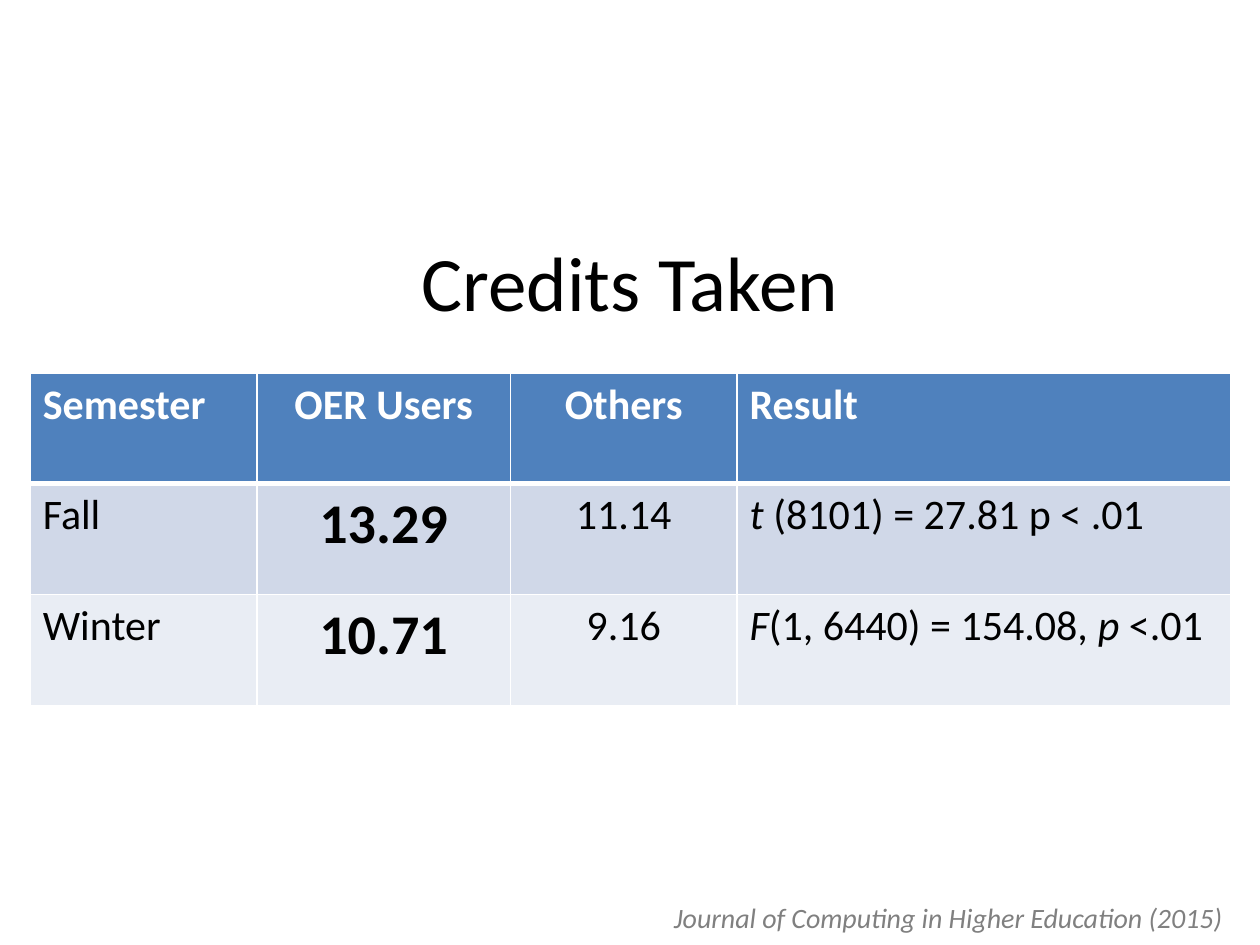
from lxml.etree import SubElement
from pptx import Presentation
from pptx.dml.color import RGBColor
from pptx.enum.text import MSO_ANCHOR, PP_ALIGN
from pptx.oxml.ns import qn
from pptx.util import Inches, Pt

FONT = "Calibri"
BLACK = RGBColor(0x00, 0x00, 0x00)
WHITE = RGBColor(0xFF, 0xFF, 0xFF)
GRAY = RGBColor(0x80, 0x80, 0x80)
HEADER_BLUE = RGBColor(0x4F, 0x81, 0xBD)
ROW_FILLS = [HEADER_BLUE, RGBColor(0xD0, 0xD8, 0xE8), RGBColor(0xE9, 0xED, 0xF4)]

TITLE = "Credits Taken"
CITATION = "Journal of Computing in Higher Education (2015)"
# Each cell is a list of text runs.
ROWS = [
    [["Semester"], ["OER Users"], ["Others"], ["Result"]],
    [["Fall"], ["13.29"], ["11.14"], ["t", " (8101) = 27.81 p < .01"]],
    [["Winter"], ["10.71"], ["9.16"], ["F", "(1, 6440) = 154.08, ", "p", " <.01"]],
]
STATISTIC_SYMBOLS = {"t", "F", "p"}
COLUMN_WIDTHS = [1.8, 2.01, 1.8, 3.92]
ROW_HEIGHT = 0.88
OER_COLUMN = 1
CENTERED_COLUMNS = {1, 2}


def format_run(run, size, color, bold=False, italic=False):
    run.font.name = FONT
    run.font.size = Pt(size)
    run.font.color.rgb = color
    run.font.bold = bold
    run.font.italic = italic


def set_borders(cell, bottom_width, top_width):
    properties = cell._tc.get_or_add_tcPr()
    widths = {"lnL": 1, "lnR": 1, "lnT": top_width, "lnB": bottom_width}
    for index, (side, width) in enumerate(widths.items()):
        line = SubElement(properties, qn(f"a:{side}"), w=str(Pt(width)))
        properties.insert(index, line)  # borders precede the fill
        fill = SubElement(line, qn("a:solidFill"))
        SubElement(fill, qn("a:srgbClr"), val=str(WHITE))


def fill_cell(cell, texts, row, column):
    is_header = row == 0
    is_highlight = not is_header and column == OER_COLUMN
    cell.fill.solid()
    cell.fill.fore_color.rgb = ROW_FILLS[row]
    set_borders(cell, 3 if is_header else 1, 3 if row == 1 else 1)
    paragraph = cell.text_frame.paragraphs[0]
    paragraph.alignment = PP_ALIGN.CENTER if column in CENTERED_COLUMNS else PP_ALIGN.LEFT
    for text in texts:
        run = paragraph.add_run()
        run.text = text
        format_run(run, 32 if is_highlight else 24, WHITE if is_header else BLACK,
                   is_header or is_highlight, text in STATISTIC_SYMBOLS)


def add_title(slide):
    title = slide.shapes.title
    title.left, title.top = Inches(0.75), Inches(1.42)
    title.width, title.height = Inches(8.5), Inches(1.61)
    frame = title.text_frame
    frame.text = TITLE
    frame.vertical_anchor = MSO_ANCHOR.MIDDLE
    frame.paragraphs[0].alignment = PP_ALIGN.CENTER
    format_run(frame.paragraphs[0].runs[0], 44, BLACK)


def add_results_table(slide):
    table = slide.shapes.add_table(
        len(ROWS), len(COLUMN_WIDTHS), Inches(0.24), Inches(2.96),
        Inches(sum(COLUMN_WIDTHS)), Inches(ROW_HEIGHT * len(ROWS))).table
    for column, width in zip(table.columns, COLUMN_WIDTHS):
        column.width = Inches(width)
    for row, cells in enumerate(ROWS):
        table.rows[row].height = Inches(ROW_HEIGHT)
        for column, texts in enumerate(cells):
            fill_cell(table.cell(row, column), texts, row, column)


def add_citation(slide):
    box = slide.shapes.add_textbox(Inches(5.25), Inches(7.1), Inches(4.67), Inches(0.37))
    frame = box.text_frame
    frame.word_wrap = False
    frame.text = CITATION
    format_run(frame.paragraphs[0].runs[0], 16, GRAY, italic=True)


def main():
    presentation = Presentation()
    presentation.slide_width, presentation.slide_height = Inches(10), Inches(7.5)
    slide = presentation.slides.add_slide(presentation.slide_layouts[5])
    add_title(slide)
    add_results_table(slide)
    add_citation(slide)
    presentation.save("out.pptx")


if __name__ == "__main__":
    main()
